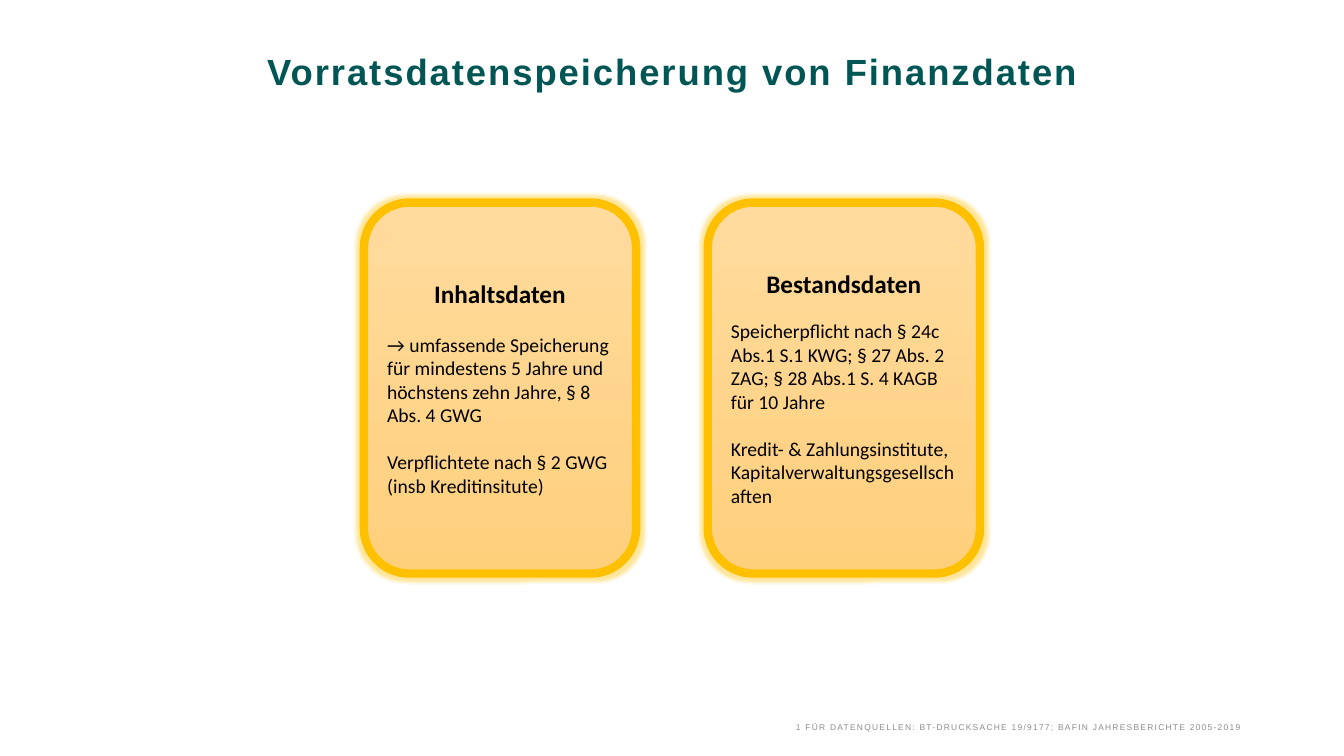
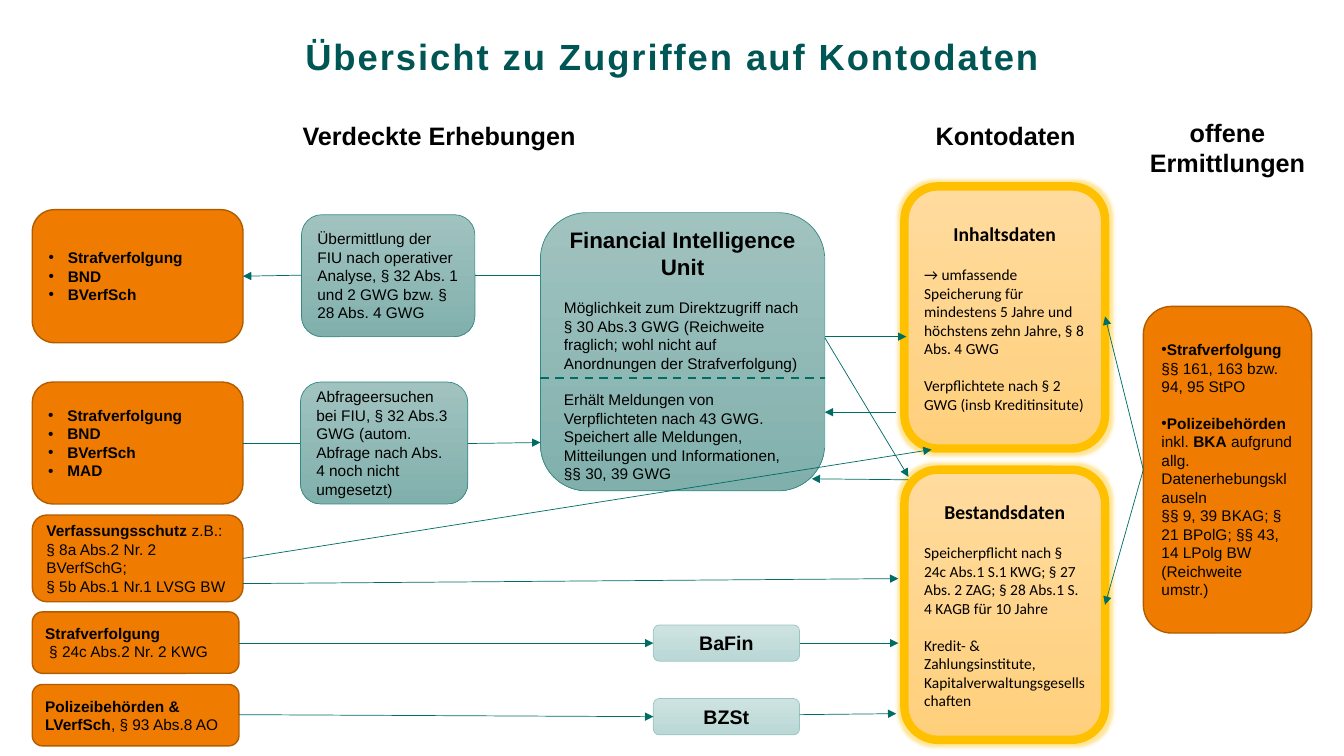
import pptx
import pptx.util
import pptx.dml.color
import pptx.enum.dml
import pptx.enum.shapes
import pptx.enum.text
import pptx.oxml.ns
import lxml.etree

THEME = {
    "sans": "Arial", "card_font": "Calibri",
    "title": "005555", "text": "000000", "muted": "8C8C8C", "arrow": "006C66",
    "title_size": 26, "head_size": 18, "unit_size": 16, "office_size": 14,
    "body_size": 11, "source_size": 6, "glow": "FFC000",
}
BOX_STYLES = {
    "authority": (("EF7C00",), "B15C00", 1),
    "fiu": (("A1C3C0", "81B0AC"), "348A85", 0.5),
    "office": (("CEE3E1", "BAD8D6"), "9AC5C2", 0.5),
    "card": (("FFDB9E", "FFD07C"), "FFC000", 6),
}
PARAGRAPH_STYLES = {
    "plain": (0, 0, False),
    "nudged": (0.04, 0, False),
    "dot": (0, 0, True),
    "list": (0.19, -0.19, True),
}
SLIDE_W, SLIDE_H = 13.33, 7.5
BLANK_LINE = 13

TITLES = [
    ("Vorratsdatenspeicherung von Finanzdaten", 0.56),
    ("Übersicht zu Zugriffen auf Kontodaten", 0.41),
]
SOURCES = "1 FÜR DATENQUELLEN: BT-DRUCKSACHE 19/9177; BAFIN JAHRESBERICHTE 2005-2019"
ACCOUNT_DATA = [
    ("Inhaltsdaten",
     "→ umfassende Speicherung für mindestens 5 Jahre und höchstens zehn Jahre, § 8 Abs. 4 GWG",
     "Verpflichtete nach § 2 GWG (insb Kreditinsitute)"),
    ("Bestandsdaten",
     "Speicherpflicht nach § 24c Abs.1 S.1 KWG; § 27 Abs. 2 ZAG; § 28 Abs.1 S. 4 KAGB für 10 Jahre",
     "Kredit- & Zahlungsinstitute, Kapitalverwaltungsgesellschaften"),
]
LARGE_CARDS = [((3.61, 2.01, 2.7, 3.68), 17), ((7.02, 2.01, 2.7, 3.68), 14.5)]
SMALL_CARDS = [((8.97, 1.85, 1.99, 2.6), 14.5), ((8.97, 4.66, 1.99, 2.68), 14.5)]

COLUMN_HEADS = [
    ("Verdeckte Erhebungen", (0.32, 1.14, 8.07, 0.4)),
    ("Kontodaten", (9.03, 1.14, 1.89, 0.4)),
    ("offene Ermittlungen", (11.23, 1.11, 1.89, 0.71)),
]
RECIPIENTS = ["Strafverfolgung", "BND", "BVerfSch"]
REQUESTERS = RECIPIENTS + ["MAD"]


def listed(names):
    return [("list", [(name, True)], 0) for name in names]


AUTHORITIES = [
    ((0.32, 2.08, 2.09, 1.32), listed(RECIPIENTS)),
    ((0.32, 3.79, 2.09, 1.21), listed(REQUESTERS)),
    ((0.32, 5.11, 2.09, 0.86), [
        ("plain", [("Verfassungsschutz", True), (" z.B.:", False)], 0),
        ("plain", [("§ 8a Abs.2 Nr. 2 BVerfSchG;", False)], 0),
        ("plain", [("§ 5b Abs.1 Nr.1 LVSG BW", False)], 0)]),
    ((0.32, 6.07, 2.05, 0.61), [
        ("plain", [("Strafverfolgung", True)], 0),
        ("nudged", [("§ 24c Abs.2 Nr. 2 KWG", False)], 0)]),
    ((0.32, 6.79, 2.05, 0.61), [
        ("plain", [("Polizeibehörden & LVerfSch", True), (", § 93 Abs.8 AO", False)], 0)]),
    ((11.34, 3.04, 1.67, 3.24), [
        ("dot", [("Strafverfolgung", True)], 0),
        ("plain", [("§§ 161, 163 bzw. 94, 95 StPO", False)], 0),
        ("dot", [("Polizeibehörden ", True), ("inkl. ", False), ("BKA", True),
                 (" aufgrund allg. Datenerhebungsklauseln", False)], BLANK_LINE),
        ("plain", [("§§ 9, 39 BKAG; § 21 BPolG; §§ 43, 14 LPolg BW", False)], 0),
        ("plain", [("(Reichweite umstr.)", False)], 0)]),
]
FIU_STEPS = [
    ((2.99, 2.13, 1.72, 1.21),
     "Übermittlung der FIU nach operativer Analyse, § 32 Abs. 1 und 2 GWG bzw. § 28 Abs. 4 GWG"),
    ((2.98, 3.79, 1.66, 1.21),
     "Abfrageersuchen bei FIU, § 32 Abs.3 GWG (autom. Abfrage nach Abs. 4 noch nicht umgesetzt)"),
]
FIU_AT = (5.36, 2.11, 2.82, 2.76)
FIU_NAME = "Financial Intelligence Unit"
FIU_ROLES = [
    "Möglichkeit zum Direktzugriff nach § 30 Abs.3 GWG (Reichweite fraglich; "
    "wohl nicht auf Anordnungen der Strafverfolgung)",
    "Erhält Meldungen von Verpflichteten nach 43 GWG. Speichert alle Meldungen, "
    "Mitteilungen und Informationen, §§ 30, 39 GWG",
]
OFFICES = [("BaFin", (6.48, 6.2, 1.45, 0.36)), ("BZSt", (6.48, 6.93, 1.45, 0.36))]

AUTHORITY_RIGHT, NARROW_RIGHT = 2.41, 2.37
FIU_LEFT, FIU_RIGHT = FIU_AT[0], FIU_AT[0] + FIU_AT[2]
OFFICE_LEFT, OFFICE_RIGHT = 6.48, 7.93
CARD_LEFT, CARD_RIGHT = 8.91, 10.96
OPEN_SIDE = (11.34, 4.66)
PLAIN_LINES = [
    ((FIU_LEFT, 2.73), (4.71, 2.73)),
    ((AUTHORITY_RIGHT, 4.4), (2.98, 4.4)),
]
ARROWS = [
    ((2.99, 2.73), (AUTHORITY_RIGHT, 2.74)),
    ((4.64, 4.4), (FIU_LEFT, 4.39)),
    ((AUTHORITY_RIGHT, 5.54), (9.24, 4.46)),
    ((AUTHORITY_RIGHT, 5.79), (CARD_LEFT, 5.74)),
    ((NARROW_RIGHT, 6.38), (OFFICE_LEFT, 6.38)),
    ((NARROW_RIGHT, 7.09), (OFFICE_LEFT, 7.11)),
    ((OFFICE_RIGHT, 6.38), (CARD_LEFT, 6.38)),
    ((OFFICE_RIGHT, 7.09), (8.89, 7.08)),
    ((FIU_RIGHT, 3.34), (8.99, 3.34)),
    ((FIU_RIGHT, 3.35), (9.01, 4.73)),
    ((8.89, 4.09), (FIU_RIGHT, 4.09)),
    ((9.01, 4.76), (8.05, 4.75)),
    (OPEN_SIDE, (CARD_RIGHT, 3.14)),
    (OPEN_SIDE, (CARD_RIGHT, 6)),
]
FIU_DIVIDER = ((FIU_LEFT, 3.75), (FIU_RIGHT, 3.75))

ALIGN = pptx.enum.text.PP_ALIGN
ANCHOR = pptx.enum.text.MSO_ANCHOR


def inches(values):
    return [pptx.util.Inches(value) for value in values]


def color(code):
    return pptx.dml.color.RGBColor.from_string(code)


def child(parent, tag, **attributes):
    return lxml.etree.SubElement(parent, pptx.oxml.ns.qn(tag), attributes)


def add_run(paragraph, text, size, bold=False, font=THEME["sans"], ink=THEME["text"], spacing=0):
    run = paragraph.add_run()
    run.text = text
    run.font.name = font
    run.font.size = pptx.util.Pt(size)
    run.font.bold = bold
    run.font.color.rgb = color(ink)
    if spacing:
        run.font._element.set("spc", str(round(spacing * 100)))


def next_paragraph(frame, align=ALIGN.LEFT, before=0):
    first = frame.paragraphs[0]
    paragraph = frame.add_paragraph() if first.runs else first
    paragraph.alignment = align
    if before:
        paragraph.space_before = pptx.util.Pt(before)
    return paragraph


def clear_margins(frame):
    frame.margin_left = frame.margin_right = frame.margin_top = frame.margin_bottom = 0


def add_slide(deck, title, top):
    slide = deck.slides.add_slide(deck.slide_layouts[5])
    holder = slide.shapes.title
    holder.left, holder.top, holder.width, holder.height = inches((0.92, top, 11.5, 1.45))
    frame = holder.text_frame
    clear_margins(frame)
    frame.auto_size = pptx.enum.text.MSO_AUTO_SIZE.NONE
    frame.vertical_anchor = ANCHOR.TOP
    paragraph = next_paragraph(frame, ALIGN.CENTER)
    paragraph.line_spacing = pptx.util.Pt(THEME["title_size"])
    add_run(paragraph, title, THEME["title_size"], True, ink=THEME["title"], spacing=1.4)
    return slide


def add_box(slide, at, style):
    fills, edge, weight = BOX_STYLES[style]
    box = slide.shapes.add_shape(pptx.enum.shapes.MSO_SHAPE.ROUNDED_RECTANGLE, *inches(at))
    box.shadow.inherit = False
    if len(fills) == 1:
        box.fill.solid()
        box.fill.fore_color.rgb = color(fills[0])
    else:
        box.fill.gradient()
        box.fill.gradient_angle = 270
        for stop, code in zip(box.fill.gradient_stops, fills):
            stop.color.rgb = color(code)
    box.line.color.rgb = color(edge)
    box.line.width = pptx.util.Pt(weight)
    box.text_frame.word_wrap = True
    box.text_frame.vertical_anchor = ANCHOR.MIDDLE
    return box


def add_textbox(slide, at, text, align, size, **run_format):
    frame = slide.shapes.add_textbox(*inches(at)).text_frame
    frame.word_wrap = True
    add_run(next_paragraph(frame, align), text, size, **run_format)
    return frame


def add_card(slide, at, content, gap, head_size, body_size):
    card = add_box(slide, at, "card")
    effects = card._element.spPr.find(pptx.oxml.ns.qn("a:effectLst"))
    glow = child(effects, "a:glow", rad=str(pptx.util.Pt(5)))
    child(child(glow, "a:srgbClr", val=THEME["glow"]), "a:alpha", val="40000")
    head, *body = content
    font = THEME["card_font"]
    frame = card.text_frame
    add_run(next_paragraph(frame, ALIGN.CENTER), head, head_size, True, font)
    for text, before in zip(body, (gap, body_size * 1.2)):
        add_run(next_paragraph(frame, before=before), text, body_size, font=font)


def add_authority(slide, at, paragraphs):
    frame = add_box(slide, at, "authority").text_frame
    for style, runs, before in paragraphs:
        margin, indent, bullet = PARAGRAPH_STYLES[style]
        paragraph = next_paragraph(frame, before=before)
        properties = paragraph._p.get_or_add_pPr()
        properties.set("marL", str(pptx.util.Inches(margin)))
        properties.set("indent", str(pptx.util.Inches(indent)))
        if bullet:
            child(properties, "a:buFont", typeface=THEME["sans"])
            child(properties, "a:buChar", char="•")
        for text, bold in runs:
            add_run(paragraph, text, THEME["body_size"], bold)


def add_line(slide, start, end, weight=0.5, arrow=False, dashed=False):
    line = slide.shapes.add_connector(
        pptx.enum.shapes.MSO_CONNECTOR.STRAIGHT, *inches(start + end))
    line.line.color.rgb = color(THEME["arrow"])
    line.line.width = pptx.util.Pt(weight)
    if dashed:
        line.line.dash_style = pptx.enum.dml.MSO_LINE.DASH
    if arrow:
        child(line.line._get_or_add_ln(), "a:tailEnd", type="triangle")
    child(line._element.spPr, "a:effectLst")


def add_fiu(slide):
    frame = add_box(slide, FIU_AT, "fiu").text_frame
    frame.vertical_anchor = ANCHOR.TOP
    frame.margin_top = 0
    add_run(next_paragraph(frame, ALIGN.CENTER), FIU_NAME, THEME["unit_size"], True)
    for role in FIU_ROLES:
        add_run(next_paragraph(frame, before=BLANK_LINE), role, THEME["body_size"])


def build_storage(deck):
    slide = add_slide(deck, *TITLES[0])
    for (at, gap), content in zip(LARGE_CARDS, ACCOUNT_DATA):
        add_card(slide, at, content, gap, 18, 14)
    sources = add_textbox(slide, (1.04, 7.06, 11.26, 0.2), SOURCES, ALIGN.RIGHT,
                          THEME["source_size"], ink=THEME["muted"], spacing=0.9)
    clear_margins(sources)
    sources.vertical_anchor = ANCHOR.BOTTOM


def build_access(deck):
    slide = add_slide(deck, *TITLES[1])
    for head, at in COLUMN_HEADS:
        add_textbox(slide, at, head, ALIGN.CENTER, THEME["head_size"], bold=True)
    for at, paragraphs in AUTHORITIES:
        add_authority(slide, at, paragraphs)
    add_fiu(slide)
    for at, step in FIU_STEPS:
        add_run(next_paragraph(add_box(slide, at, "fiu").text_frame), step, THEME["body_size"])
    for office, at in OFFICES:
        frame = add_box(slide, at, "office").text_frame
        add_run(next_paragraph(frame, ALIGN.CENTER), office, THEME["office_size"], True)
    for (at, gap), content in zip(SMALL_CARDS, ACCOUNT_DATA):
        add_card(slide, at, content, gap, 14, THEME["body_size"])
    for start, end in PLAIN_LINES:
        add_line(slide, start, end)
    for start, end in ARROWS:
        add_line(slide, start, end, arrow=True)
    add_line(slide, *FIU_DIVIDER, weight=1.5, dashed=True)


def main():
    deck = pptx.Presentation()
    deck.slide_width, deck.slide_height = inches((SLIDE_W, SLIDE_H))
    build_storage(deck)
    build_access(deck)
    deck.save("out.pptx")


if __name__ == "__main__":
    main()
